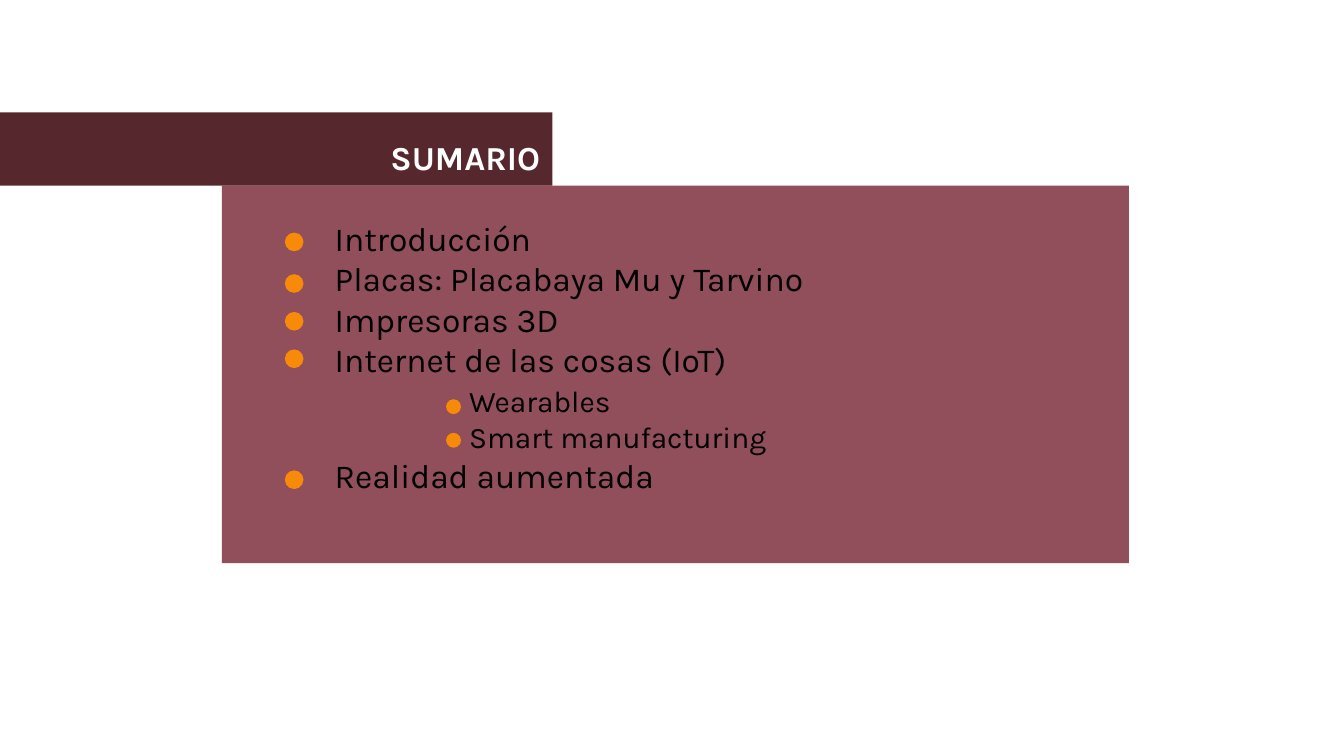
from dataclasses import dataclass

import pptx
import pptx.dml.color
import pptx.enum.shapes
import pptx.enum.text
import pptx.oxml.ns
import pptx.util
from lxml import etree

Pt = pptx.util.Pt
RGB = pptx.dml.color.RGBColor.from_string


@dataclass(frozen=True)
class Theme:
    """Colours, font and type sizes of the deck."""
    font: str = "Karla"
    banner: str = "56282D"
    panel: str = "914E5B"
    dot: str = "F78A08"
    title: str = "FFFFFF"
    text: str = "000000"
    title_size: int = 18
    sizes: tuple = (18, 16)


THEME = Theme()
DOT_SIZES = (10, 8)
DOT_LEFTS = (33.8, 120.2)
INDENTS = (0, 72)
AGENDA = [
    ("Introducción", 0, 25.2),
    ("Placas: Placabaya Mu y Tarvino", 0, 47.5),
    ("Impresoras 3D", 0, 67.7),
    ("Internet de las cosas (IoT)", 0, 87.8),
    ("Wearables", 1, 114.5),
    ("Smart manufacturing", 1, 132.5),
    ("Realidad aumentada", 0, 152.6),
]


def place(sp, x, y, w, h):
    """Move and size a shape in points."""
    sp.left, sp.top, sp.width, sp.height = Pt(x), Pt(y), Pt(w), Pt(h)


def add_filled(s, kind, x, y, w, h, color):
    """Add a plain shape without outline or shadow."""
    sp = s.shapes.add_shape(kind, Pt(x), Pt(y), Pt(w), Pt(h))
    sp.shadow.inherit = False
    sp.fill.solid()
    sp.fill.fore_color.rgb = RGB(color)
    sp.line.fill.background()
    return sp


def add_backdrop(s, x, y, w, h, color):
    """Add a rectangle behind everything else."""
    sp = add_filled(s, pptx.enum.shapes.MSO_SHAPE.RECTANGLE, x, y, w, h, color)
    sp.element.getparent().insert(2, sp.element)


def setup_frame(sp):
    """Give a placeholder a wrapping, top-anchored, fixed text frame."""
    tf = sp.text_frame
    tf.word_wrap = True
    tf.auto_size = pptx.enum.text.MSO_AUTO_SIZE.NONE
    tf.vertical_anchor = pptx.enum.text.MSO_ANCHOR.TOP
    return tf


def style_runs(p, size, color, bold=False):
    """Format every run of a paragraph."""
    for r in p.runs:
        r.font.name = THEME.font
        r.font.size = Pt(size)
        r.font.bold = bold
        r.font.color.rgb = RGB(color)


def add_banner(s, x, y, w, h, title):
    """Draw the banner with the right-aligned slide title."""
    add_backdrop(s, x, y, w, h, THEME.banner)
    sp = s.shapes.title
    place(sp, x + w - 166.4, y + 5.7, 167, 26)
    tf = setup_frame(sp)
    tf.margin_left = tf.margin_right = tf.margin_top = tf.margin_bottom = Pt(7.2)
    tf.text = title
    p = tf.paragraphs[0]
    p.alignment = pptx.enum.text.PP_ALIGN.RIGHT
    style_runs(p, THEME.title_size, THEME.title, True)


def add_agenda(s, x, y, w, h, items):
    """Draw the panel with a two-level list and its dots."""
    add_backdrop(s, x, y, w, h, THEME.panel)
    sp = s.placeholders[1]
    place(sp, x + 53.3, y + 13.7, 385.2, 191.5)
    tf = setup_frame(sp)
    tf.text = "\n".join(text for text, _, _ in items)
    previous = 0
    for p, (_, level, top) in zip(tf.paragraphs, items):
        p.level = level
        pPr = p._p.get_or_add_pPr()
        pPr.set("marL", str(Pt(INDENTS[level])))
        pPr.set("indent", "0")
        etree.SubElement(pPr, pptx.oxml.ns.qn("a:buNone"))
        p.space_before = Pt(2 if level > previous else 0)
        style_runs(p, THEME.sizes[level], THEME.text)
        size = DOT_SIZES[level]
        add_filled(s, pptx.enum.shapes.MSO_SHAPE.OVAL, x + DOT_LEFTS[level],
                   y + top, size, size, THEME.dot)
        previous = level


def main():
    """Build and save the deck."""
    prs = pptx.Presentation()
    prs.slide_width, prs.slide_height = Pt(720), Pt(405)
    s = prs.slides.add_slide(prs.slide_layouts[1])
    add_banner(s, 0, 60.2, 296, 39.3, "SUMARIO")
    add_agenda(s, 118.8, 99.4, 486, 202.3, AGENDA)
    prs.save("out.pptx")


if __name__ == "__main__":
    main()
